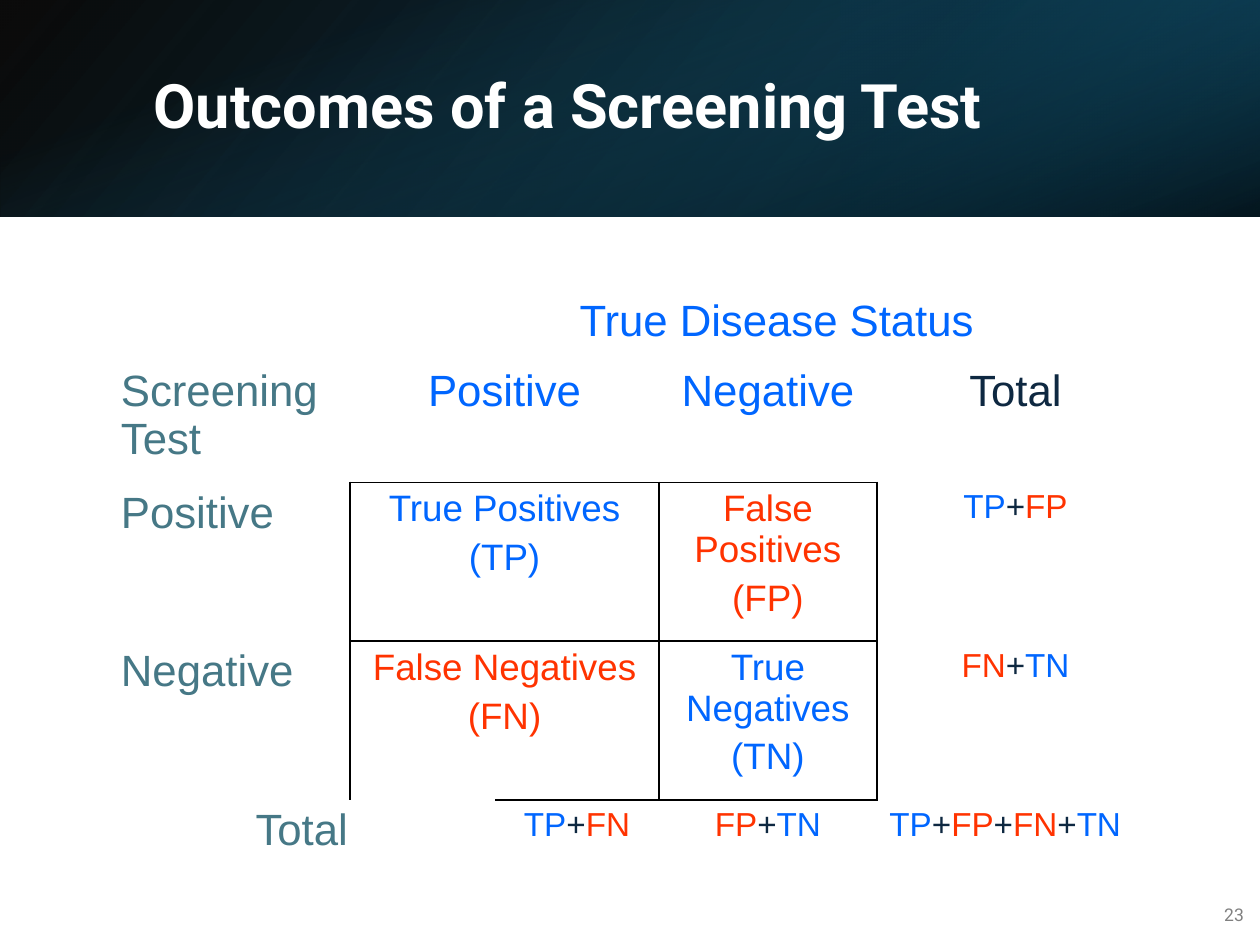
from dataclasses import dataclass
from lxml.etree import SubElement as Sub
from pptx import Presentation
from pptx.dml.color import RGBColor as Rgb
from pptx.enum.shapes import MSO_SHAPE as Shape
from pptx.enum.text import MSO_ANCHOR as Anchor, PP_ALIGN as Align
from pptx.oxml.ns import qn
from pptx.util import Inches, Pt


@dataclass(frozen=True)
class Theme:
    blue: str = "0066FF"
    red: str = "FF3300"
    teal: str = "467886"
    ink: str = "0E2841"
    white: str = "FFFFFF"
    gray: str = "808080"
    black: str = "000000"
    deep: str = "104862"
    navy: str = "0B3041"
    sea: str = "156082"
    head: str = "Roboto"
    body: str = "Arial"
    title: int = 35
    label: int = 25
    cell: int = 21
    total: int = 19
    note: int = 10


THEME = Theme()
TINTS = {"TP": THEME.blue, "TN": THEME.blue, "FP": THEME.red, "FN": THEME.red, "+": THEME.ink}


def write(frame, text, size, color=None, font=THEME.body, bold=False,
          align=Align.LEFT, before=0, after=0, line=None):
    frame.word_wrap = True
    for i, row in enumerate(text.split("\n")):
        para = frame.add_paragraph() if i else frame.paragraphs[0]
        para.alignment = align
        para.space_before, para.space_after = Pt(before), Pt(after)
        if line:
            para.line_spacing = line
        parts = [row] if color else row.replace("+", " + ").split()
        for part in parts:
            run = para.add_run()
            run.text = part
            face = run.font
            face.name, face.size, face.bold = font, Pt(size), bold
            face.color.rgb = Rgb.from_string(color or TINTS[part])


class Deck:
    def __init__(self, theme, width=10, height=7.5):
        self.theme = theme
        self.file = Presentation()
        self.wide = self.file.slide_width = Inches(width)
        self.high = self.file.slide_height = Inches(height)
        self.slide = self.file.slides.add_slide(self.file.slide_layouts[6])

    def across(self, share):
        return round(self.wide * share / 100)

    def down(self, share):
        return round(self.high * share / 100)

    def place(self, x, y, w, h):
        return self.across(x), self.down(y), self.across(w), self.down(h)

    def fade(self, area, stops, angle, turn=0, flip=False):
        shape = self.slide.shapes.add_shape(Shape.RECTANGLE, *self.place(*area))
        shape.shadow.inherit = False
        shape.line.fill.background()
        shape.rotation = turn
        if flip:
            shape.element.spPr.xfrm.set("flipH", "1")
        fill = shape.fill
        fill.gradient()
        fill.gradient_angle = 360 - angle
        for stop, (spot, color, _) in zip(fill.gradient_stops, stops):
            stop.position = spot / 100
            stop.color.rgb = Rgb.from_string(color)
        tones = shape.element.spPr.iter(qn("a:srgbClr"))
        for tone, (_, _, alpha) in zip(list(tones), stops):
            Sub(tone, qn("a:alpha"), val=str(alpha * 1000))

    def text(self, area, text, **style):
        frame = self.slide.shapes.add_textbox(*self.place(*area)).text_frame
        frame.vertical_anchor = Anchor.MIDDLE
        write(frame, text, font=self.theme.head, after=6, **style)

    def table(self, area, cols, rows, cells):
        shape = self.slide.shapes.add_table(len(rows), len(cols), *self.place(*area))
        grid = shape.table
        grid.first_row = grid.horz_banding = False
        for col, share in zip(grid.columns, cols):
            col.width = self.across(share)
        for row, share in zip(grid.rows, rows):
            row.height = self.down(share)
        for row, col, span, sides, text, size, color, align in cells:
            cell = grid.cell(row, col)
            if span > 1:
                cell.merge(grid.cell(row, col + span - 1))
            write(cell.text_frame, text, size, color, align=align, before=size / 5)
        for cell in grid.iter_cells():
            cell.fill.background()
        for row, col, _, sides, *_ in cells:
            self.edge(grid.cell(row, col), sides)
        return grid

    def edge(self, cell, sides):
        props = cell._tc.get_or_add_tcPr()
        for spot, side in enumerate("LRTB"):
            line = Sub(props, qn(f"a:ln{side}"), w=str(Pt(1)))
            props.insert(spot, line)
            if side in sides:
                fill = Sub(line, qn("a:solidFill"))
                Sub(fill, qn("a:srgbClr"), val=self.theme.black)
            else:
                Sub(line, qn("a:noFill"))


def main():
    t = THEME
    deck = Deck(t)
    band = 22.93
    deck.fade((0, 0, 100, band), [(0, t.black, 96), (100, t.deep, 100)], 140, flip=True)
    deck.fade((66.7, 0, 33.3, band), [(19, t.navy, 68), (100, t.sea, 79)], 320,
              turn=180, flip=True)
    deck.fade((41.4, -55.2, 17.2, 133.33), [(23, t.sea, 0), (99, t.black, 74)], 340, turn=90)
    deck.text((11.2, 5.07, 82.4, 12.8), "Outcomes of a Screening Test",
              size=t.title, color=t.white, bold=True, line=0.9)
    deck.text((96, 94.13, 3.7, 5.33), "23", size=t.note, color=t.gray, align=Align.RIGHT)

    left, mid = Align.LEFT, Align.CENTER
    cells = [
        (0, 0, 2, "", "", t.label, t.teal, left),
        (0, 2, 3, "", "True Disease Status", t.label, t.blue, left),
        (1, 0, 1, "", "Screening Test", t.label, t.teal, left),
        (1, 1, 2, "B", "Positive", t.label, t.blue, mid),
        (1, 3, 1, "B", "Negative", t.label, t.blue, mid),
        (1, 4, 1, "", "Total", t.label, t.ink, mid),
        (2, 0, 1, "R", "Positive", t.label, t.teal, left),
        (2, 1, 2, "LRTB", "True Positives\n(TP)", t.cell, t.blue, mid),
        (2, 3, 1, "LRTB", "False Positives\n(FP)", t.cell, t.red, mid),
        (2, 4, 1, "L", "TP+FP", t.total, None, mid),
        (3, 0, 1, "R", "Negative", t.label, t.teal, left),
        (3, 1, 2, "LRTB", "False Negatives\n(FN)", t.cell, t.red, mid),
        (3, 3, 1, "LRTB", "True Negatives\n(TN)", t.cell, t.blue, mid),
        (3, 4, 1, "L", "FN+TN", t.total, None, mid),
        (4, 0, 2, "", "Total", t.label, t.teal, mid),
        (4, 2, 1, "T", "TP+FN", t.total, None, mid),
        (4, 3, 1, "T", "FP+TN", t.total, None, mid),
        (4, 4, 1, "", "TP+FP+FN+TN", t.total, None, left),
    ]
    grid = deck.table((8.6, 30.8, 83, 61.2), (19.2, 11.5, 13, 17.3, 22),
                      (7.33, 12.93, 16.8, 16.8, 7.33), cells)
    grid.cell(0, 2).margin_left = deck.across(6.7)
    deck.file.save("out.pptx")


if __name__ == "__main__":
    main()
